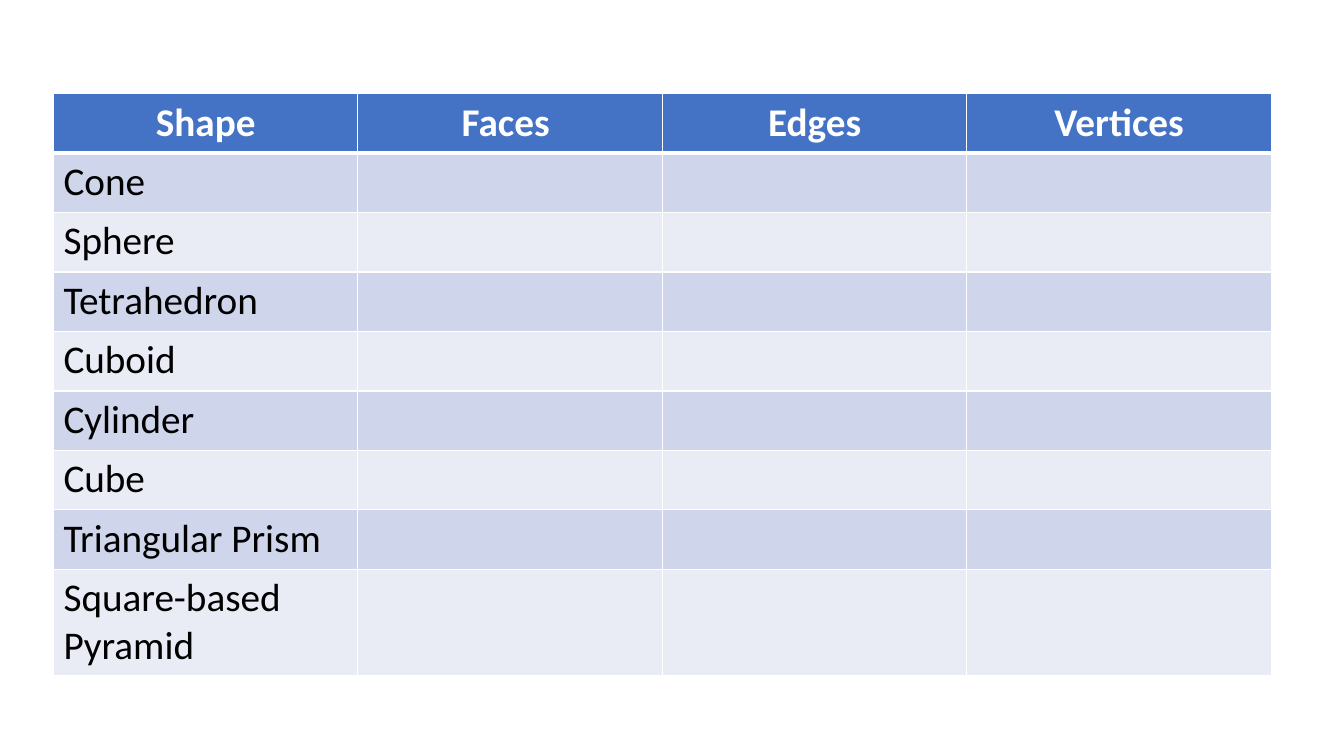
from lxml import etree
from pptx import Presentation
from pptx import util as u
from pptx.dml.color import RGBColor
from pptx.enum import text
from pptx.oxml import ns

# Content: each solid is a list of text lines
HEADINGS = ["Shape", "Faces ", "Edges", "Vertices"]
SOLIDS = [
    ["Cone"],
    ["Sphere"],
    ["Tetrahedron"],
    ["Cuboid"],
    ["Cylinder"],
    ["Cube"],
    ["Triangular Prism"],
    ["Square-based", "Pyramid"],
]

# Style
FONT, SIZE = "Calibri", 28
WHITE, BLACK, HEADER = "FFFFFF", "000000", "4472C4"
BANDS = ["CFD5EA", "E9EBF5"]
LEFT, TOP, COLUMN, ROW = 0.53, 0.93, 3.02, 0.59


def color(value):
    return RGBColor.from_string(value)


def add_border(cell, side, points):
    line = etree.SubElement(cell._tc.get_or_add_tcPr(), ns.qn("a:ln" + side),
                            w=str(u.Pt(points)))
    fill = etree.SubElement(line, ns.qn("a:solidFill"))
    etree.SubElement(fill, ns.qn("a:srgbClr"), val=WHITE)


def format_cell(cell, fill, top=1, bottom=1):
    for side, points in (("L", 1), ("R", 1), ("T", top), ("B", bottom)):
        add_border(cell, side, points)
    cell.fill.solid()
    cell.fill.fore_color.rgb = color(fill)


def write(cell, lines, ink, bold=False, align=text.PP_ALIGN.LEFT):
    frame = cell.text_frame
    for index, line in enumerate(lines):
        para = frame.add_paragraph() if index else frame.paragraphs[0]
        para.alignment = align
        span = para.add_run()
        span.text = line
        span.font.name = FONT
        span.font.size = u.Pt(SIZE)
        span.font.bold = bold
        span.font.color.rgb = color(ink)


deck = Presentation()
deck.slide_width, deck.slide_height = u.Inches(13.33), u.Inches(7.5)
page = deck.slides.add_slide(deck.slide_layouts[6])

# Table grid
row_count, column_count = len(SOLIDS) + 1, len(HEADINGS)
table = page.shapes.add_table(
    row_count, column_count, u.Inches(LEFT), u.Inches(TOP),
    u.Inches(COLUMN * column_count), u.Inches(ROW * row_count)).table
for column in table.columns:
    column.width = u.Inches(COLUMN)
for row in table.rows:
    row.height = u.Inches(ROW)

# Header row
for column, heading in enumerate(HEADINGS):
    cell = table.cell(0, column)
    format_cell(cell, HEADER, bottom=3)
    write(cell, [heading], WHITE, bold=True, align=text.PP_ALIGN.CENTER)

# Banded rows, with blank cells to fill in
for number, lines in enumerate(SOLIDS, start=1):
    for column in range(column_count):
        format_cell(table.cell(number, column), BANDS[(number - 1) % 2],
                    top=3 if number == 1 else 1)
    write(table.cell(number, 0), lines, BLACK)

deck.save("out.pptx")
